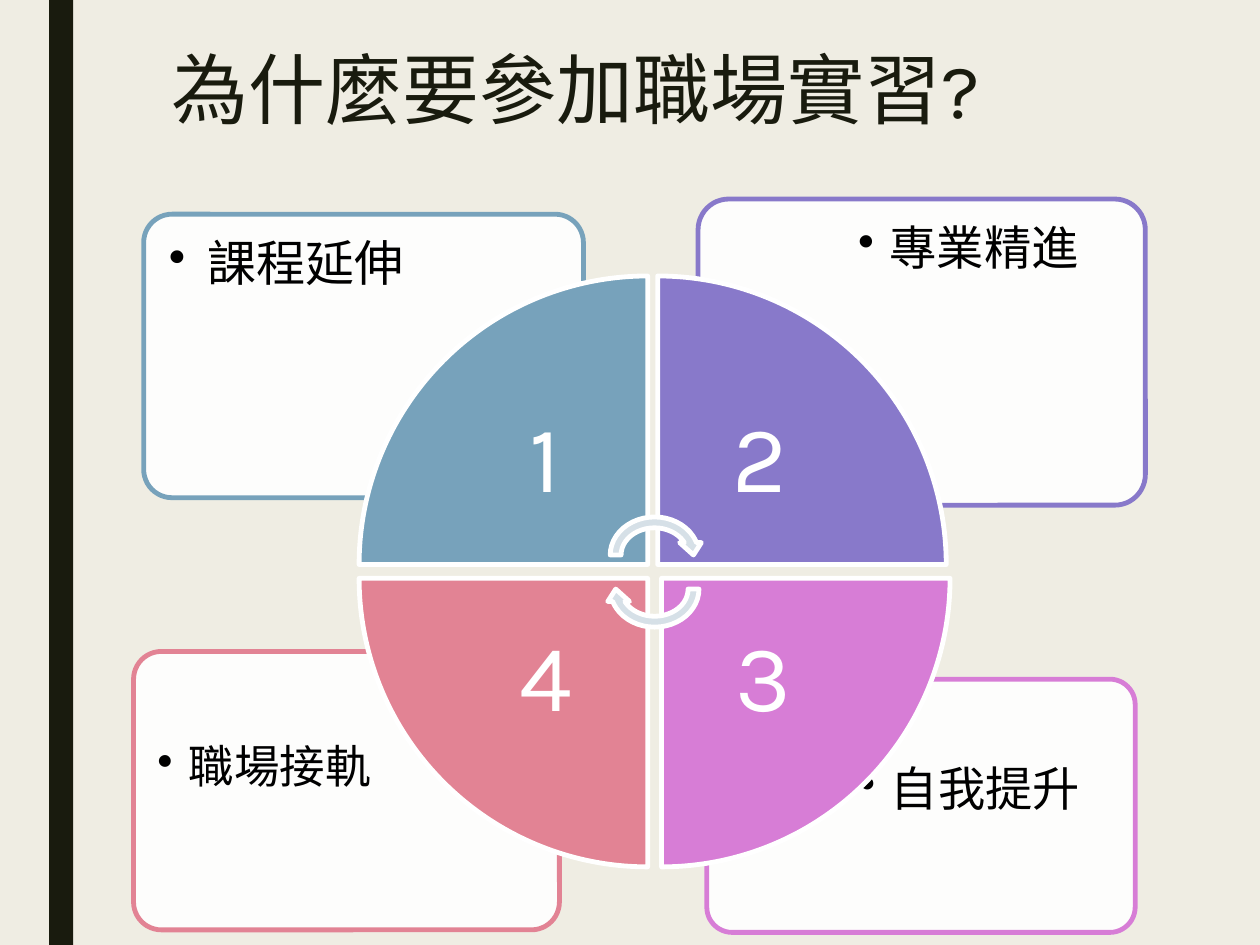
"""Build a slide of four reasons for joining a workplace internship, set around a cycle."""
from lxml import etree
from pptx import Presentation
from pptx.dml.color import RGBColor
from pptx.enum.shapes import MSO_SHAPE
from pptx.enum.text import MSO_ANCHOR, PP_ALIGN
from pptx.oxml.ns import qn
from pptx.util import Inches, Pt

RECTANGLE = MSO_SHAPE.RECTANGLE
ROUNDED = MSO_SHAPE.ROUNDED_RECTANGLE
WEDGE = MSO_SHAPE.PIE_WEDGE
ARROW = MSO_SHAPE.CIRCULAR_ARROW
TOP, MIDDLE = MSO_ANCHOR.TOP, MSO_ANCHOR.MIDDLE
LEFT, CENTER = PP_ALIGN.LEFT, PP_ALIGN.CENTER

CREAM = RGBColor(0xEF, 0xED, 0xE3)
INK = RGBColor(0x19, 0x1B, 0x0E)
WHITE = RGBColor(0xFF, 0xFF, 0xFF)
BLACK = RGBColor(0, 0, 0)
BLUE = RGBColor(0x77, 0xA2, 0xBB)
PURPLE = RGBColor(0x88, 0x79, 0xCA)
ORCHID = RGBColor(0xD7, 0x7D, 0xD6)
ROSE = RGBColor(0xE2, 0x83, 0x94)
MIST = RGBColor(0xD6, 0xE0, 0xE7)

FONT = "Karla"
SLIDE_W, SLIDE_H = 10, 7.5
OUTLINE = 2.75
WEDGE_SIZE, NUMBER_SIZE = 2.29, 1.62
NUMBER_SHIFT = WEDGE_SIZE - NUMBER_SIZE

TITLE = "為什麼要參加職場實習?"
REASONS = [
    {"number": 3, "text": "自我提升", "size": 27, "color": ORCHID, "indent": 0.25,
     "card": (5.61, 5.39, 3.4, 2.01), "label": (6.68, 5.94, 2.29, 1.42),
     "inset": 0.14, "wedge": (5.25, 4.59)},
    {"number": 4, "text": "職場接軌", "size": 26, "color": ROSE, "indent": 0.25,
     "card": (1.06, 5.17, 3.38, 2.21), "label": (1.11, 5.77, 2.27, 1.56),
     "inset": 0.14, "wedge": (2.85, 4.59)},
    {"number": 2, "text": "專業精進", "size": 27, "color": PURPLE, "indent": 0.25,
     "card": (5.54, 1.58, 3.55, 2.43), "label": (6.66, 1.63, 2.38, 1.72),
     "inset": 0.15, "wedge": (5.22, 2.19)},
    {"number": 1, "text": "課程延伸", "size": 28, "color": BLUE, "indent": 0.31,
     "card": (1.14, 1.7, 3.49, 2.25), "label": (1.19, 1.75, 2.34, 1.59),
     "inset": 0.15, "wedge": (2.85, 2.19)},
]
ARROWS = [(4.06, 0), (4.33, 180)]


def add_block(slide, preset, box, fill, line=None, rotation=0):
    block = slide.shapes.add_shape(preset, *map(Inches, box))
    block.shadow.inherit = False
    block.rotation = rotation
    block.fill.solid()
    block.fill.fore_color.rgb = fill
    if line is None:
        block.line.fill.background()
    else:
        block.line.color.rgb = line
        block.line.width = Pt(OUTLINE)
    return block


def add_words(slide, box, words, size, color, insets, align=LEFT, anchor=TOP):
    frame = slide.shapes.add_textbox(*map(Inches, box)).text_frame
    frame.word_wrap = True
    frame.vertical_anchor = anchor
    frame.margin_left = frame.margin_right = Inches(insets[0])
    frame.margin_top = frame.margin_bottom = Inches(insets[1])
    frame.text = words
    paragraph = frame.paragraphs[0]
    paragraph.alignment = align
    paragraph.line_spacing = 0.9
    font = paragraph.runs[0].font
    font.name, font.size, font.color.rgb = FONT, Pt(size), color
    return paragraph


def add_bullet(paragraph, indent):
    properties = paragraph._p.get_or_add_pPr()
    properties.set("marL", str(Inches(indent)))
    properties.set("indent", str(-Inches(indent)))
    etree.SubElement(properties, qn("a:buChar")).set("char", "•")


def add_card(slide, reason):
    card = add_block(slide, ROUNDED, reason["card"], WHITE, reason["color"])
    card.adjustments[0] = 0.1
    tint = card.fill._xPr.find(qn("a:solidFill"))[0]
    etree.SubElement(tint, qn("a:alpha")).set("val", "90000")
    label = add_words(slide, reason["label"], reason["text"], reason["size"], BLACK,
                      (reason["inset"], reason["inset"]))
    add_bullet(label, reason["indent"])


def add_quadrant(slide, reason):
    number = reason["number"]
    left, top = reason["wedge"]
    add_block(slide, WEDGE, (left, top, WEDGE_SIZE, WEDGE_SIZE), reason["color"],
              WHITE, 90 * (number - 1))
    number_left = left + (NUMBER_SHIFT if number in (1, 4) else 0)
    number_top = top + (NUMBER_SHIFT if number in (1, 2) else 0)
    add_words(slide, (number_left, number_top, NUMBER_SIZE, NUMBER_SIZE), str(number),
              54, WHITE, (0.42, 0.42), CENTER, MIDDLE)


def main():
    deck = Presentation()
    deck.slide_width, deck.slide_height = Inches(SLIDE_W), Inches(SLIDE_H)
    slide = deck.slides.add_slide(deck.slide_layouts[6])
    slide.background.fill.solid()
    slide.background.fill.fore_color.rgb = CREAM

    add_block(slide, RECTANGLE, (0.39, 0, 0.19, SLIDE_H), INK)
    add_words(slide, (1.26, 0.36, 7.88, 1.62), TITLE, 44, INK, (0.1, 0.05))
    for reason in REASONS:
        add_card(slide, reason)
    for reason in sorted(REASONS, key=lambda item: item["number"]):
        add_quadrant(slide, reason)
    for top, rotation in ARROWS:
        add_block(slide, ARROW, (4.8, top, 0.79, 0.69), MIST, WHITE, rotation)
    deck.save("out.pptx")


if __name__ == "__main__":
    main()
